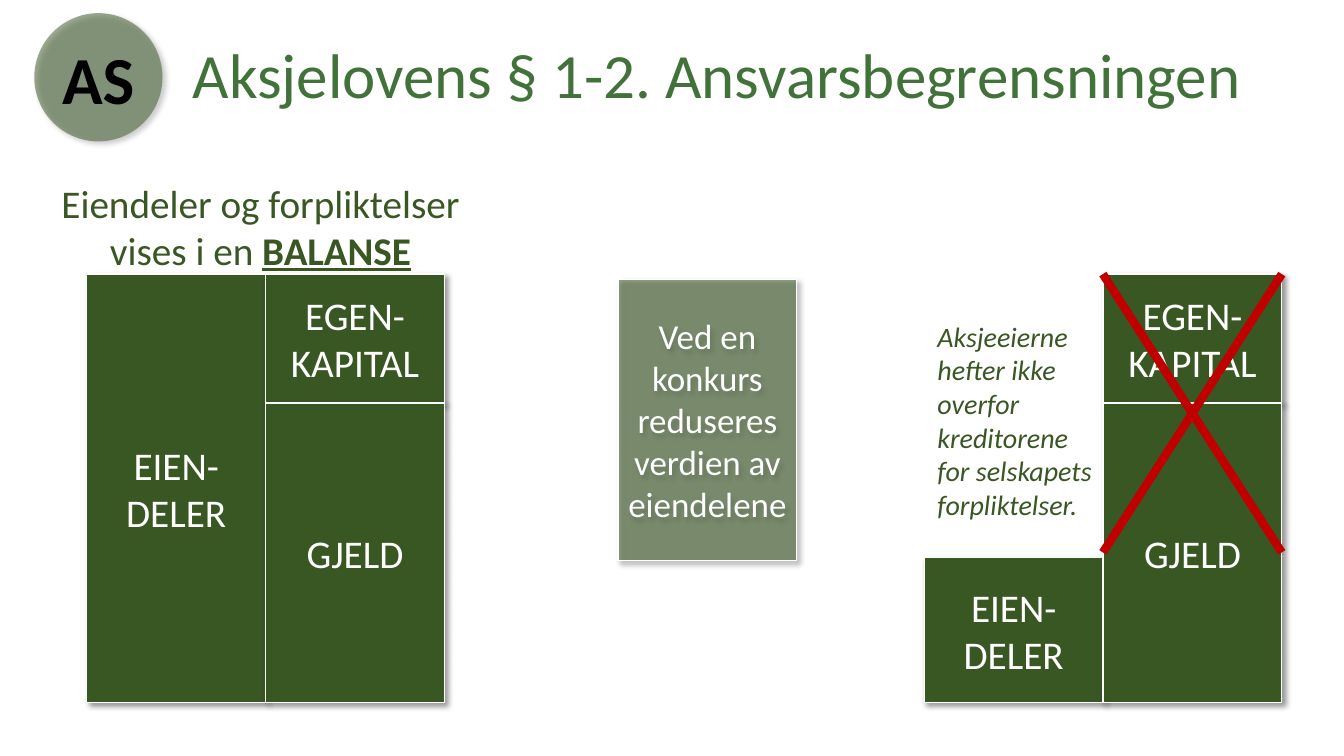
from lxml import etree
from pptx import Presentation
from pptx.dml.color import RGBColor
from pptx.enum import shapes, text
from pptx.oxml import ns
from pptx.util import Pt

GREEN = RGBColor(0x38, 0x57, 0x23)
TITLE = RGBColor(0x41, 0x72, 0x3A)
RED = RGBColor(0xC0, 0x00, 0x00)
WHITE = RGBColor(0xFF, 0xFF, 0xFF)
BLACK = RGBColor(0x00, 0x00, 0x00)
LEFT, MID = text.PP_ALIGN.LEFT, text.PP_ALIGN.CENTER
KIND = shapes.MSO_SHAPE

deck = Presentation()
deck.slide_width, deck.slide_height = Pt(960), Pt(540)
slide = deck.slides.add_slide(deck.slide_layouts[6])


def write(shape, words, size, color, align=MID, anchor=text.MSO_ANCHOR.MIDDLE):
    """Put one paragraph in the shape; a list of words gives its runs."""
    frame = shape.text_frame
    frame.word_wrap = True
    frame.vertical_anchor = anchor
    para = frame.paragraphs[0]
    para.alignment = align
    for word in words:
        run = para.add_run()
        run.text = word
        run.font.name = "Calibri"
        run.font.size = Pt(size)
        run.font.color.rgb = color
    return para


def block(kind, box, alpha=100):
    """Draw a green shape with a soft shadow; alpha is its opacity in percent."""
    shape = slide.shapes.add_shape(kind, *map(Pt, box))
    shape.fill.solid()
    shape.fill.fore_color.rgb = GREEN
    tint = shape._element.spPr.find(ns.qn("a:solidFill"))[0]
    if alpha < 100:
        etree.SubElement(tint, ns.qn("a:alpha"), val=str(alpha * 1000))
    shape.line.color.rgb = WHITE
    shape.line.width = Pt(1)
    shape.shadow.inherit = False
    glow = shape._element.spPr.find(ns.qn("a:effectLst"))
    cast = etree.SubElement(glow, ns.qn("a:outerShdw"), blurRad=str(Pt(4)),
                            dist=str(Pt(3)), dir="2700000", rotWithShape="0")
    dark = etree.SubElement(cast, ns.qn("a:srgbClr"), val=str(BLACK))
    etree.SubElement(dark, ns.qn("a:alpha"), val="40000")
    return shape


# Heading and lead
head = slide.shapes.add_textbox(Pt(120.2), Pt(28), Pt(830), Pt(56))
head.text_frame.margin_left = Pt(17.4)
write(head, ["Aksjelovens § 1-2. Ansvarsbegrensningen"], 45, TITLE, LEFT).line_spacing = 0.9

lead = slide.shapes.add_textbox(Pt(32.4), Pt(124.6), Pt(307.4), Pt(75))
para = write(lead, ["Eiendeler og forpliktelser vises i en ", "BALANSE"], 28, GREEN,
             anchor=text.MSO_ANCHOR.TOP)
para.runs[1].font.bold = para.runs[1].font.underline = True

# Balance sheets before and after: assets left, equity over debt right
WIDE, TOP, SPLIT, BASE = 127.7, 195.8, 288, 501.8
cells = []
for left, start in ((62, TOP), (660.2, 398.4)):
    right = left + WIDE
    cells += [("EIEN-DELER", left, start, BASE, 28, 100),
              ("EGEN-KAPITAL", right, TOP, SPLIT, 28, 100),
              ("GJELD", right, SPLIT, BASE, 28, 100)]
cells.append(("Ved en konkurs reduseres verdien av eiendelene", 441.4, 199.6, 400.4, 25, 55))
for words, left, top, base, size, alpha in cells:
    cell = block(KIND.RECTANGLE, (left, top, WIDE, base - top), alpha)
    cell.text_frame.margin_left = cell.text_frame.margin_right = Pt(4)
    write(cell, [words], size, WHITE)

# Note on liability
note = slide.shapes.add_textbox(Pt(669.6), Pt(199.5), Pt(119), Pt(201))
note.text_frame.margin_left = note.text_frame.margin_right = 0
para = write(note, ["Aksjeeierne hefter ikke overfor kreditorene for selskapets forpliktelser."],
             20, GREEN, LEFT)
para.runs[0].font.italic = True

# Red cross over the lost equity
near, far = 787.8, 915.6
for start, end in ((near, far), (far, near)):
    stroke = slide.shapes.add_connector(shapes.MSO_CONNECTOR.STRAIGHT,
                                        Pt(start), Pt(TOP), Pt(end), Pt(394.6))
    stroke.line.color.rgb = RED
    stroke.line.width = Pt(6)
    etree.SubElement(stroke._element.spPr, ns.qn("a:effectLst"))

# Round badge
disc = block(KIND.OVAL, (24.5, 9.4, 91.6, 91.6), 50)
disc.line.fill.background()
badge = slide.shapes.add_textbox(Pt(20.2), Pt(22.4), Pt(100), Pt(65.4))
write(badge, ["AS"], 48, BLACK).runs[0].font.bold = True

deck.save("out.pptx")
